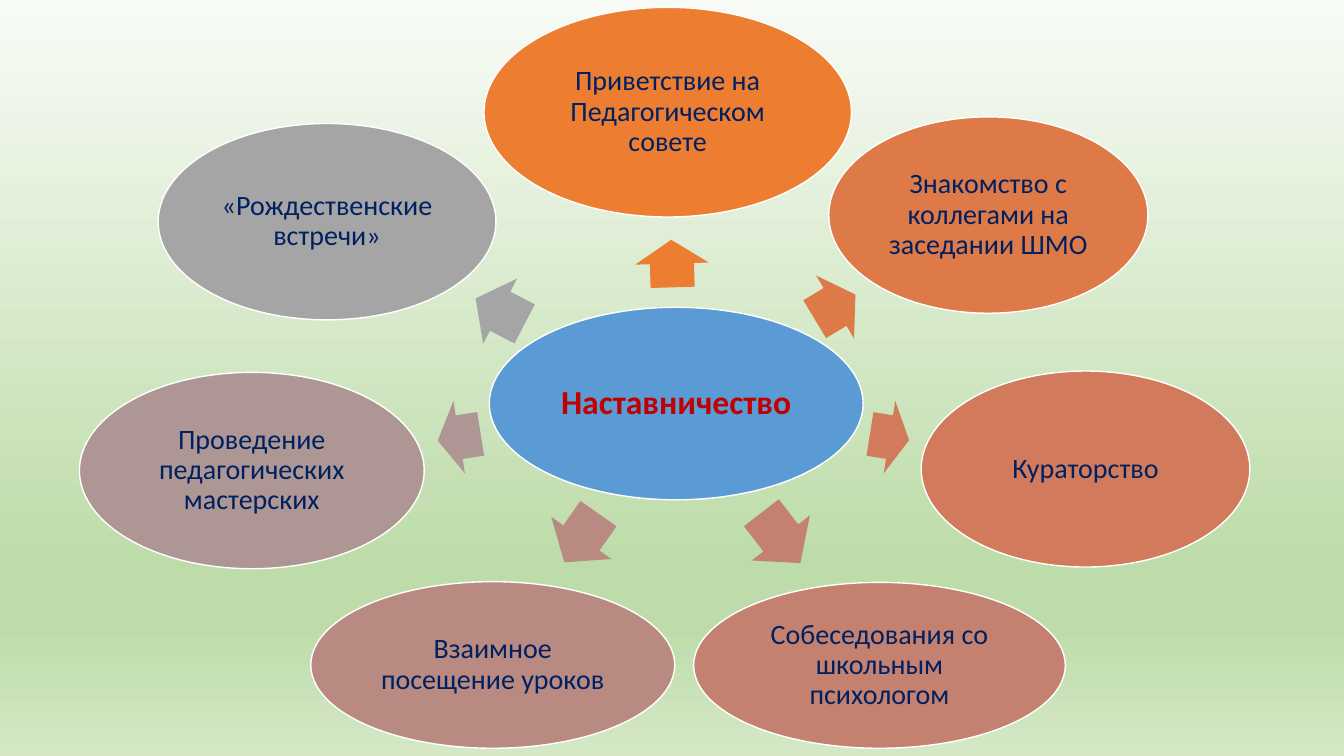
"""Build a slide of seven mentoring activities arranged around a central hub."""
from copy import deepcopy

from pptx import Presentation
from pptx.dml.color import RGBColor
from pptx.enum.shapes import MSO_SHAPE
from pptx.enum.text import MSO_ANCHOR, MSO_AUTO_SIZE, PP_ALIGN
from pptx.oxml.ns import qn
from pptx.util import Pt

WHITE = RGBColor(0xFF, 0xFF, 0xFF)
NAVY = RGBColor(0x00, 0x20, 0x60)
RED = RGBColor(0xC0, 0x00, 0x00)
BLUE = RGBColor(0x5B, 0x9B, 0xD5)
ORANGE = RGBColor(0xED, 0x7D, 0x31)
RUST = RGBColor(0xDE, 0x7A, 0x47)
TERRACOTTA = RGBColor(0xD1, 0x7B, 0x5C)
ROSE = RGBColor(0xC4, 0x81, 0x70)
MAUVE = RGBColor(0xB9, 0x8A, 0x82)
TAUPE = RGBColor(0xAE, 0x96, 0x94)
GREY = RGBColor(0xA5, 0xA5, 0xA5)
PALE_GREEN = RGBColor(0xF8, 0xFB, 0xF6)
GREEN = RGBColor(0xBE, 0xDC, 0xAA)
LIGHT_GREEN = RGBColor(0xD4, 0xE8, 0xC6)

ARROW_HEIGHT = 52.5


def write(holder, text, size=20, color=NAVY, bold=False):
    frame = holder.text_frame
    frame.word_wrap = True
    frame.auto_size = MSO_AUTO_SIZE.NONE
    frame.vertical_anchor = MSO_ANCHOR.MIDDLE
    frame.margin_left = frame.margin_right = Pt(2)
    frame.margin_top = frame.margin_bottom = Pt(2)
    paragraph = frame.paragraphs[0]
    paragraph.alignment = PP_ALIGN.CENTER
    paragraph.line_spacing = 0.9
    run = paragraph.add_run()
    run.text = text
    run.font.name = "Calibri"
    run.font.size = Pt(size)
    run.font.bold = bold
    run.font.color.rgb = color


def add_figure(preset, box, color, outlined=False):
    figure = slide.shapes.add_shape(preset, *[Pt(length) for length in box])
    figure.shadow.inherit = False
    figure.fill.solid()
    figure.fill.fore_color.rgb = color
    if outlined:
        figure.line.color.rgb = WHITE
        figure.line.width = Pt(1)
    else:
        figure.line.fill.background()
    return figure


presentation = Presentation()
presentation.slide_width = Pt(960)
presentation.slide_height = Pt(540)
slide = presentation.slides.add_slide(presentation.slide_layouts[5])

backdrop = slide.background.fill
backdrop.gradient()
backdrop.gradient_angle = 270
stop_list = slide.element.find(".//" + qn("a:gsLst"))
for extra_stop in [deepcopy(stop) for stop in stop_list]:
    stop_list.append(extra_stop)
shades = [(0, PALE_GREEN), (0.74, GREEN), (0.83, GREEN), (1, LIGHT_GREEN)]
for stop, (position, shade) in zip(backdrop.gradient_stops, shades):
    stop.position = position
    stop.color.rgb = shade

add_figure(MSO_SHAPE.OVAL, (349.5, 219.5, 267, 137.5), BLUE, outlined=True)
mentoring = slide.shapes.title
mentoring.left, mentoring.top = Pt(388.5), Pt(239.5)
mentoring.width, mentoring.height = Pt(189), Pt(97)
slide.shapes.element.append(mentoring.element)
write(mentoring, "Наставничество", size=24, color=RED, bold=True)

activities = [
    ("Приветствие на Педагогическом совете", ORANGE,
     (345.75, 5.25, 262.5, 149.75), (463, 162, 34), 268.3),
    ("Знакомство с коллегами на заседании ШМО", RUST,
     (592, 83.5, 228, 140.25), (579.5, 193, 34), 328.9),
    ("Кураторство", TERRACOTTA,
     (658, 265, 234.75, 140), (621.25, 286, 28.25), 9.1),
    ("Собеседования со школьным психологом", ROSE,
     (495.5, 416, 265.5, 118.5), (535, 358, 45.5), 52.2),
    ("Взаимное посещение уроков", MAUVE,
     (222, 415.5, 260, 119), (394, 358, 42.5), 125),
    ("Проведение педагогических мастерских", TAUPE,
     (56.75, 266, 246.25, 140.25), (312.5, 286, 31), 171),
    ("«Рождественские встречи»", GREY,
     (113, 88.25, 241.25, 140.25), (337.5, 196, 39.5), 207.5),
]
for activity, color, oval_box, arrow_box, angle in activities:
    arrow = add_figure(MSO_SHAPE.RIGHT_ARROW, (*arrow_box, ARROW_HEIGHT), color)
    arrow.adjustments[0] = 0.6
    arrow.adjustments[1] = 0.5
    arrow.rotation = angle
    oval = add_figure(MSO_SHAPE.OVAL, oval_box, color, outlined=True)
    write(oval, activity)

presentation.save("out.pptx")
